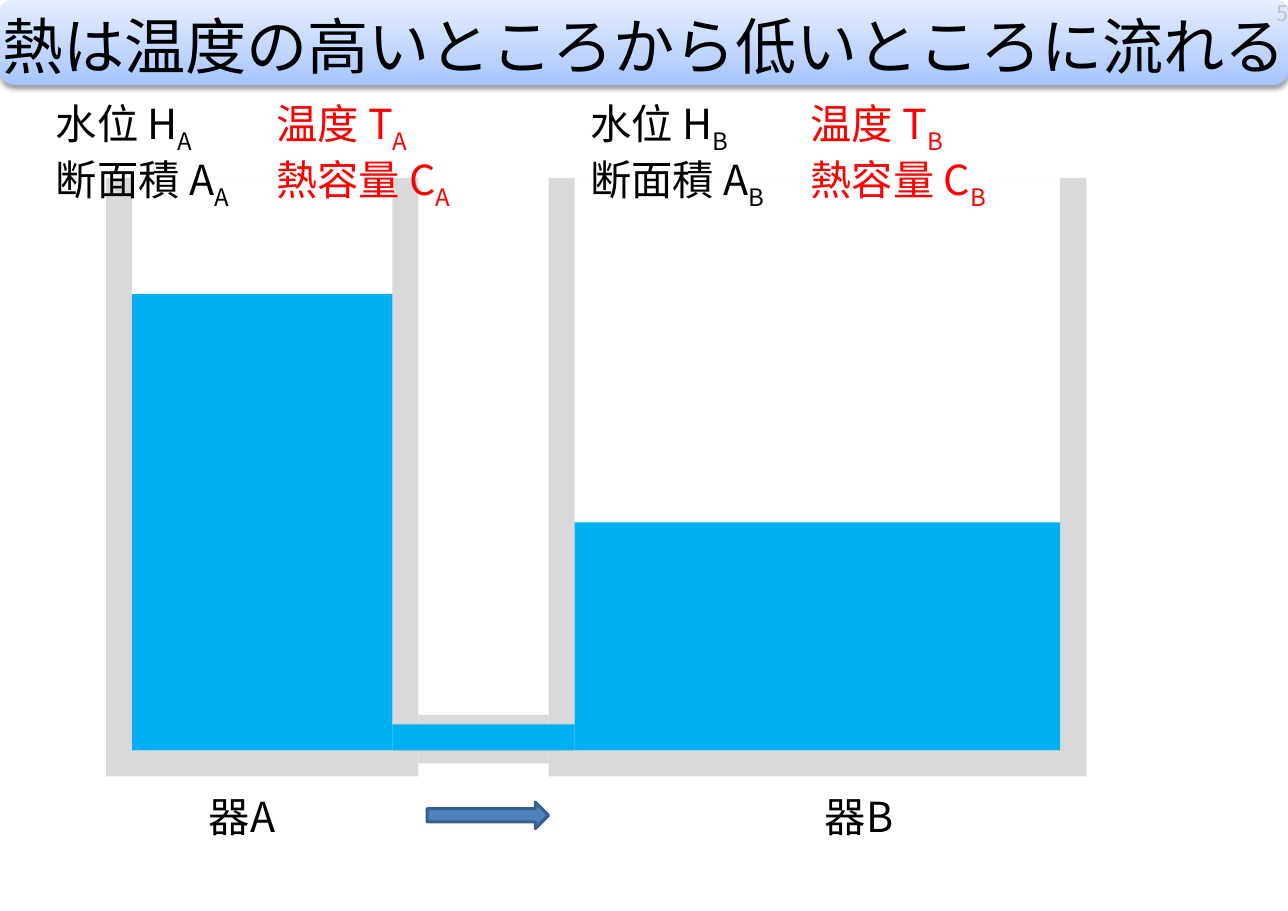
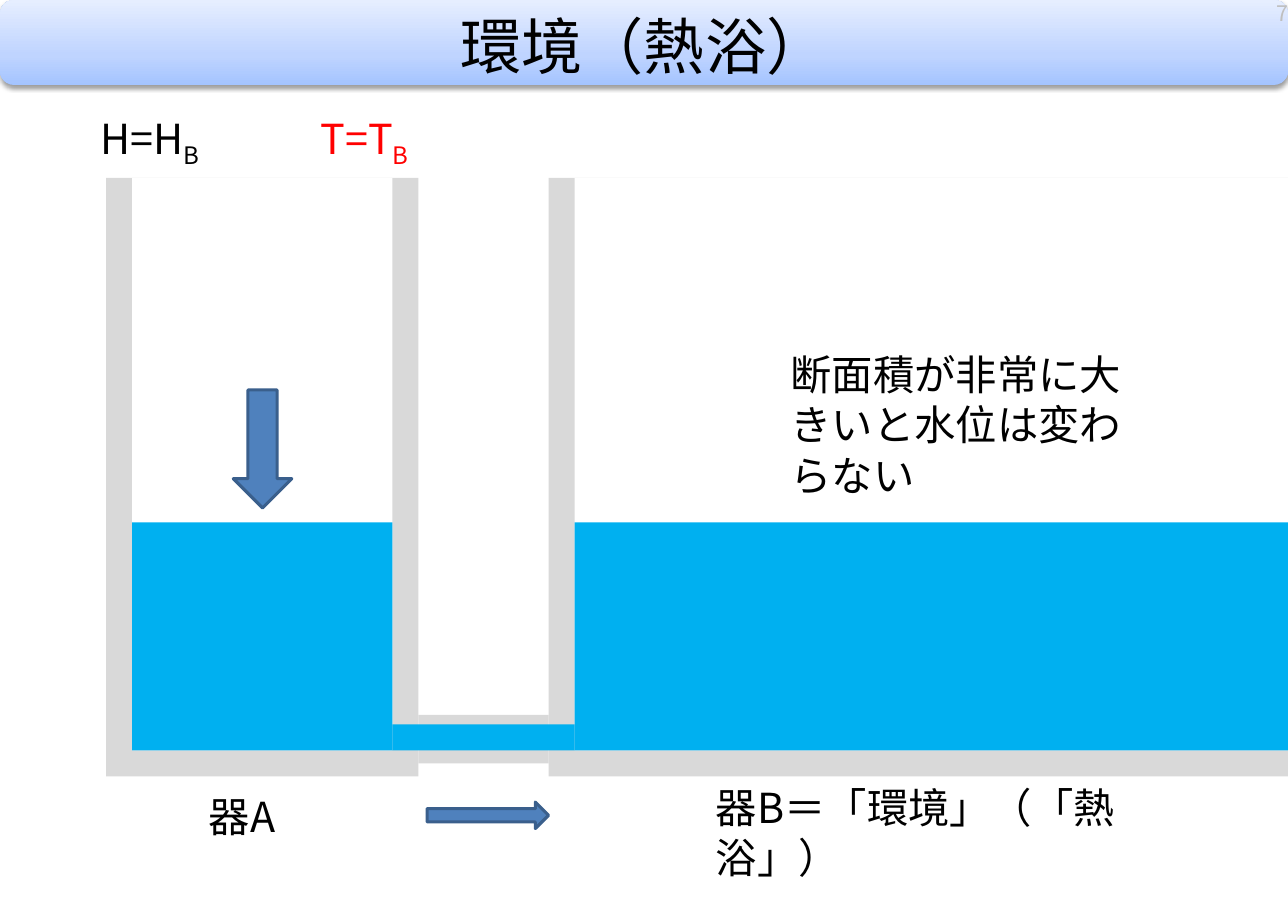
from copy import deepcopy

from lxml import etree
from pptx import Presentation
from pptx.dml.color import RGBColor
from pptx.enum.shapes import MSO_SHAPE
from pptx.enum.text import MSO_ANCHOR, PP_ALIGN
from pptx.oxml import parse_xml
from pptx.oxml.ns import nsdecls, qn
from pptx.util import Cm, Pt

RECT, ROUND = MSO_SHAPE.RECTANGLE, MSO_SHAPE.ROUNDED_RECTANGLE
RIGHT, DOWN = MSO_SHAPE.RIGHT_ARROW, MSO_SHAPE.DOWN_ARROW
MID, TOP = MSO_ANCHOR.MIDDLE, MSO_ANCHOR.TOP

FONT = "Noto Sans CJK JP"
BLACK, RED, WHITE, PALE = "000000", "FF0000", "FFFFFF", "BFBFBF"
WALL, WATER, BLUE, EDGE = "D9D9D9", "00B0F0", "4F81BD", "3A5F8C"
STOPS = [(0, "A4C4FF"), (0.35, "BFD4FF"), (1, "E6EEFF")]

WIDE, HIGH = 29.7, 21
RIM, FLOOR, THICK = 4.1, 17.3, 0.6
LEFT_A, WIDE_A = 3.05, 6
LEFT_B = 13.25
LOW, FULL = 5.26, 10.52
PIPE = LEFT_A + WIDE_A + THICK
GAP = LEFT_B - THICK - PIPE


def block(slide, kind, x, y, w, h, fill, line=None):
    """Add a filled preset shape, sized in centimetres."""
    shape = slide.shapes.add_shape(kind, Cm(x), Cm(y), Cm(w), Cm(h))
    shape.shadow.inherit = False
    shape.fill.solid()
    shape.fill.fore_color.rgb = RGBColor.from_string(fill)
    if line:
        shape.line.color.rgb = RGBColor.from_string(line)
        shape.line.width = Pt(2)
    else:
        shape.line.fill.background()
    return shape


def text(slide, paras, x, y, w, h, size=27, pitch=33, pad=True,
         align=PP_ALIGN.LEFT, anchor=TOP, wrap=True, color=BLACK):
    """Add text; each paragraph is a list of (text, subscript, colour) runs."""
    box = slide.shapes.add_textbox(Cm(x), Cm(y), Cm(w), Cm(h))
    frame = box.text_frame
    frame.word_wrap = wrap
    frame.vertical_anchor = anchor
    if not pad:
        frame.margin_left = frame.margin_right = 0
        frame.margin_top = frame.margin_bottom = 0
    if isinstance(paras, str):
        paras = [[(paras, "", color)]]
    for i, parts in enumerate(paras):
        para = frame.add_paragraph() if i else frame.paragraphs[0]
        para.alignment = align
        if pitch:
            para.line_spacing = Pt(pitch)
        para._p.get_or_add_pPr().set("defTabSz", str(Cm(2.54)))
        for words, sub, tint in parts:
            for chars, base in ((words, None), (sub, "-25000")):
                if not chars:
                    continue
                run = para.add_run()
                run.text = chars
                run.font.size = Pt(size)
                run.font.color.rgb = RGBColor.from_string(tint)
                run.font.name = FONT
                props = run.font._element
                etree.SubElement(props, qn("a:ea")).set("typeface", FONT)
                if base:
                    props.set("baseline", base)


prs = Presentation()
prs.slide_width, prs.slide_height = Cm(WIDE), Cm(HIGH)

# Title, page number, water depth in A, inner width of B
pages = [
    ("熱は温度の高いところから低いところに流れる", "5", FULL, 11.2),
    ("環境（熱浴）", "7", LOW, WIDE - LEFT_B),
]
slides = []
for title, num, depth, wide_b in pages:
    slide = prs.slides.add_slide(prs.slide_layouts[6])
    slides.append(slide)

    # Title band
    band = block(slide, ROUND, 0, 0, WIDE, 1.96, WHITE)
    band.fill.gradient()
    band.fill.gradient_angle = 90
    props = band._element.spPr
    stops = props.find(".//" + qn("a:gsLst"))
    stops.append(deepcopy(stops[0]))
    for stop, (place, tint) in zip(band.fill.gradient_stops, STOPS):
        stop.position = place
        stop.color.rgb = RGBColor.from_string(tint)
    props.find(qn("a:effectLst")).append(parse_xml(
        f'<a:outerShdw {nsdecls("a")} blurRad="{Pt(3.1)}" dist="{Pt(1.6)}" '
        'dir="5400000" rotWithShape="0"><a:srgbClr val="000000">'
        '<a:alpha val="38000"/></a:srgbClr></a:outerShdw>'))

    block(slide, RECT, PIPE, 16.48, GAP, 1.12, WALL)
    text(slide, title, 0, 0.03, WIDE, 2, size=40, pitch=None, pad=False,
         align=PP_ALIGN.CENTER, anchor=MID, wrap=False)
    text(slide, num, 28.85, 0, 0.85, 0.6, size=14, pitch=None, pad=False,
         align=PP_ALIGN.RIGHT, anchor=MID, color=PALE)

    # Tanks and the water in them
    deep = FLOOR - RIM
    for x, w, level in ((LEFT_A, WIDE_A, depth), (LEFT_B, wide_b, LOW)):
        block(slide, RECT, x - THICK, RIM, w + 2 * THICK, deep + THICK, WALL)
        block(slide, RECT, x, RIM, w, deep, WHITE)
        block(slide, RECT, x, FLOOR - level, w, level, WATER)
    block(slide, RECT, PIPE - THICK, FLOOR - THICK, GAP + 2 * THICK, THICK,
          WATER)

    block(slide, RIGHT, 9.85, 18.49, 2.8, 0.61, BLUE, line=EDGE)
    text(slide, "器A", 4.57, 18.1, 2.67, 1.42)

flow, bath = slides

# Heat flow: quantities of both tanks
text(flow, "器B", 18.77, 18.1, 2.67, 1.42)
for x, sub in ((1.04, "A"), (13.36, "B")):
    rows = [[(black, sub + "\t", BLACK), (red, sub, RED)]
            for black, red in (("水位 H", "温度 T"), ("断面積 A", "熱容量 C"))]
    text(flow, rows, x, 2.16, 10.54, 2.57, pitch=36.6)

# Heat bath: tank B as the environment
text(bath, "器B＝「環境」（「熱浴」）", 16.26, 17.88, 11.99, 1.42)
text(bath, "断面積が非常に大きいと水位は変わらない", 17.98, 7.9, 8.48, 3.71)
block(bath, DOWN, 5.38, 8.99, 1.35, 2.72, BLUE, line=EDGE)
text(bath, [[("H=H", "B\t\t", BLACK), ("T=T", "B", RED)]],
     2.06, 2.49, 8.61, 1.42, pitch=36.6)

prs.save("out.pptx")
